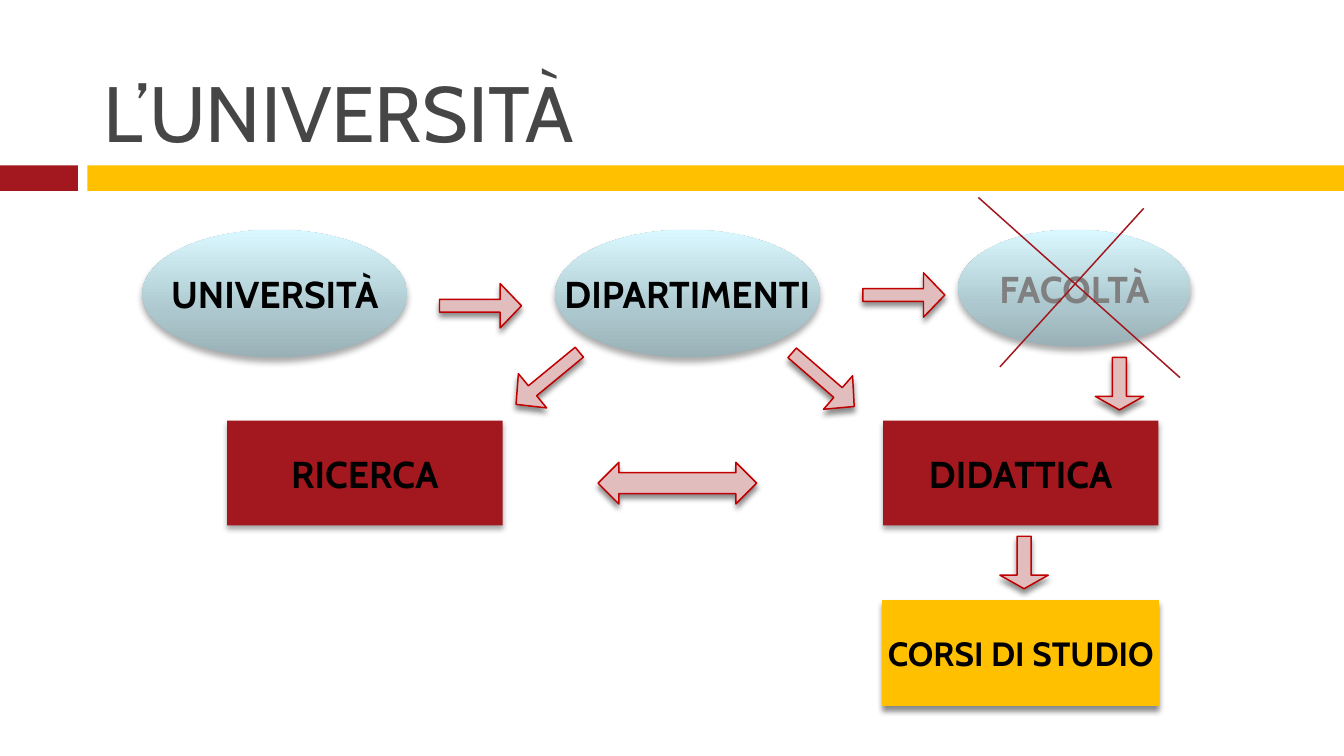
from copy import deepcopy

from lxml.etree import SubElement
from pptx import Presentation
from pptx.dml.color import RGBColor
from pptx.enum.shapes import MSO_CONNECTOR, MSO_SHAPE
from pptx.enum.text import MSO_ANCHOR, PP_ALIGN
from pptx.oxml.ns import qn
from pptx.util import Inches, Pt

FONT = "Cabin"
RED, GOLD, BLACK, GREY = "A3171E", "FFC000", "000000", "808080"
ARROW_FILL, ARROW_LINE = "E2BDBD", "C00000"
OVAL_STOPS = [(0, "98B0B6"), (0.35, "ACC8CE"), (1, "DAF8FF")]
LINE_WIDTH = Pt(0.79)


def color(value):
    return RGBColor.from_string(value)


def add_title(page, text):
    title = page.shapes.title
    title.left, title.top = Inches(0.67), Inches(0.13)
    title.width, title.height = Inches(8.92), Inches(1.1)
    title.text_frame.vertical_anchor = MSO_ANCHOR.BOTTOM
    para = title.text_frame.paragraphs[0]
    para.text = text
    para.alignment = PP_ALIGN.LEFT
    para.font.name, para.font.size = FONT, Pt(42)
    para.font.color.rgb = color("464646")


def add_shape(page, kind, position, fill=None, line=None):
    shape = page.shapes.add_shape(kind, *(Inches(value) for value in position))
    shape.shadow.inherit = False
    if fill:
        shape.fill.solid()
        shape.fill.fore_color.rgb = color(fill)
    if line:
        shape.line.color.rgb = color(line)
        shape.line.width = LINE_WIDTH
    else:
        shape.line.fill.background()
    return shape


def add_shadow(shape, opacity, blur=3, distance=2.4):
    """Cast a soft black shadow straight down; blur and distance in points."""
    effects = shape._element.spPr.find(qn("a:effectLst"))
    shadow = SubElement(effects, qn("a:outerShdw"), blurRad=str(Pt(blur)),
                        dist=str(Pt(distance)), dir="5400000", rotWithShape="0")
    tint = SubElement(shadow, qn("a:srgbClr"), val=BLACK)
    SubElement(tint, qn("a:alpha"), val=str(opacity * 1000))


def add_label(shape, text, size=20, text_color=BLACK):
    frame = shape.text_frame
    frame.word_wrap = False
    frame.vertical_anchor = MSO_ANCHOR.MIDDLE
    para = frame.paragraphs[0]
    para.text = text
    para.alignment = PP_ALIGN.CENTER
    para.font.name, para.font.size, para.font.bold = FONT, Pt(size), True
    para.font.color.rgb = color(text_color)


def add_oval(page, text, position, text_color=BLACK):
    oval = add_shape(page, MSO_SHAPE.OVAL, position)
    oval.fill.gradient()
    oval.fill.gradient_angle = 90
    stop_list = oval._element.spPr.find(qn("a:gradFill")).find(qn("a:gsLst"))
    stop_list.append(deepcopy(stop_list[-1]))
    for stop, (place, value) in zip(oval.fill.gradient_stops, OVAL_STOPS):
        stop.position = place
        stop.color.rgb = color(value)
    add_shadow(oval, 32, 3.5, 2.2)
    add_label(oval, text, text_color=text_color)


def add_box(page, text, left, top, fill=RED, line=None, size=20):
    box = add_shape(page, MSO_SHAPE.RECTANGLE, (left, top, 2.05, 0.78), fill, line)
    add_shadow(box, 45 if line else 35, distance=2.4 if line else 2)
    add_label(box, text, size)


def add_arrow(page, kind, position, adjustments=(), rotation=0):
    arrow = add_shape(page, kind, position, ARROW_FILL, ARROW_LINE)
    for index, value in enumerate(adjustments):
        arrow.adjustments[index] = value
    arrow.rotation = rotation
    add_shadow(arrow, 45)


def add_line(page, start, end):
    points = (Inches(value) for value in (*start, *end))
    line = page.shapes.add_connector(MSO_CONNECTOR.STRAIGHT, *points)
    line.line.color.rgb = color(RED)
    line.line.width = LINE_WIDTH
    SubElement(line._element.spPr, qn("a:effectLst"))


def main():
    deck = Presentation()
    deck.slide_width = Inches(10)
    deck.slide_height = deck.slide_width * 9 // 16
    page = deck.slides.add_slide(deck.slide_layouts[5])

    add_shape(page, MSO_SHAPE.RECTANGLE, (0, 1.23, 0.58, 0.19), RED)
    add_shape(page, MSO_SHAPE.RECTANGLE, (0.65, 1.23, 9.35, 0.19), GOLD)
    add_title(page, "L’UNIVERSITÀ")

    add_oval(page, "UNIVERSITÀ", (1.06, 1.71, 1.97, 0.95))
    add_oval(page, "DIPARTIMENTI", (4.13, 1.71, 1.97, 0.95))
    add_oval(page, "FACOLTÀ", (7.13, 1.71, 1.73, 0.87), GREY)

    long_arrows = [(3.41, 1.97, 270), (6.56, 1.89, 270),
                   (5.96, 2.52, 310.9), (3.91, 2.51, 50.5)]
    for left, top, rotation in long_arrows:
        add_arrow(page, MSO_SHAPE.DOWN_ARROW, (left, top, 0.33, 0.61),
                  (0.29, 0.48), rotation)
    for left, top in [(7.44, 3.99), (8.15, 2.66)]:
        add_arrow(page, MSO_SHAPE.DOWN_ARROW, (left, top, 0.36, 0.39), (0.29, 0.28))
    add_arrow(page, MSO_SHAPE.LEFT_RIGHT_ARROW, (4.45, 3.44, 1.18, 0.31))

    add_box(page, "RICERCA", 1.69, 3.13)
    add_box(page, "DIDATTICA", 6.57, 3.13)
    add_box(page, "CORSI DI STUDIO", 6.57, 4.47, GOLD, GOLD, 18)

    add_line(page, (8.51, 1.55), (7.44, 2.73))
    add_line(page, (7.28, 1.47), (8.78, 2.81))

    deck.save("out.pptx")


if __name__ == "__main__":
    main()
